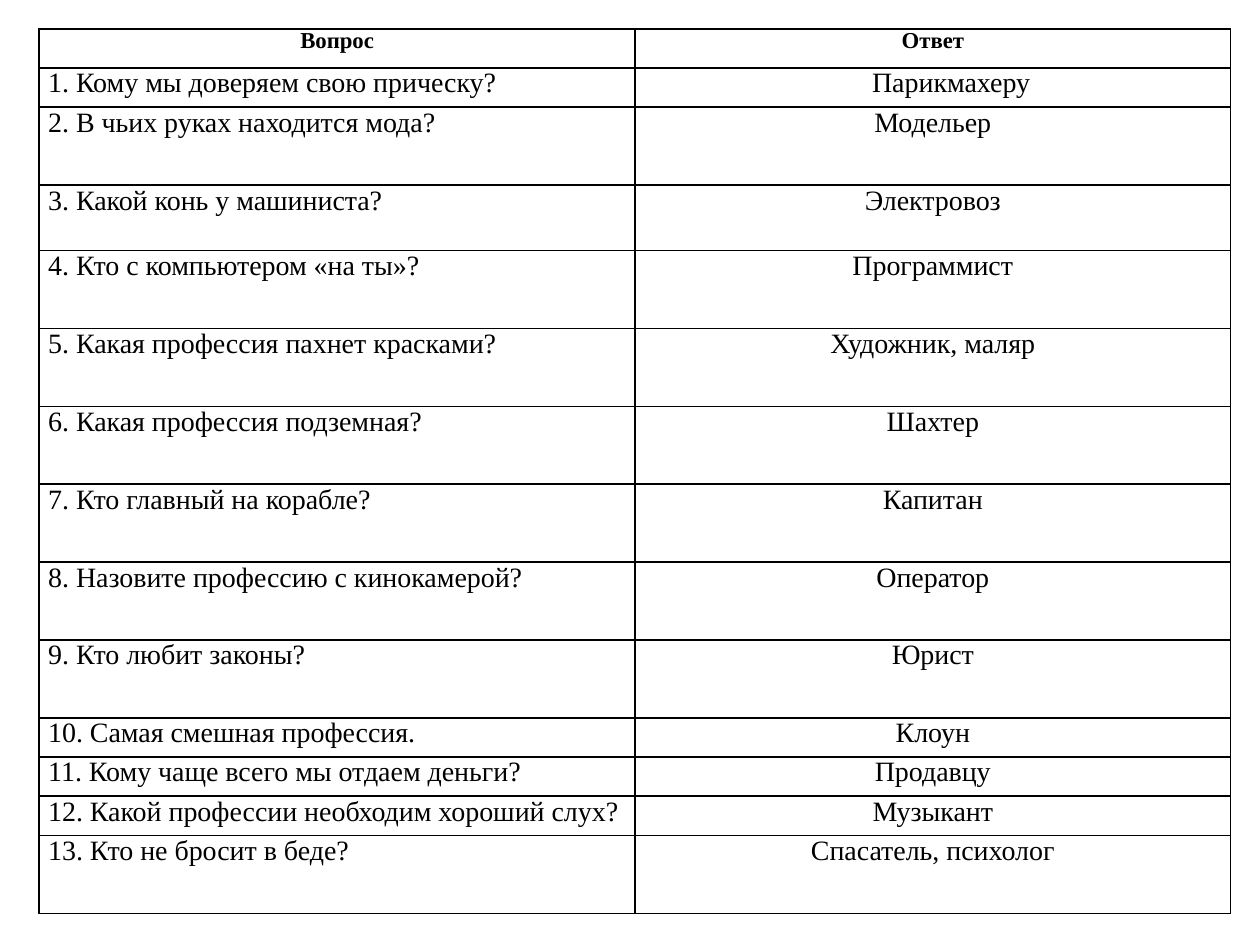
from typing import NamedTuple

from lxml.etree import SubElement
from pptx import Presentation
from pptx.dml.color import RGBColor
from pptx.enum.text import PP_ALIGN
from pptx.oxml.ns import qn
from pptx.util import Cm, Pt

FONT = "Times New Roman"
BLACK = "000000"
SHORT, MEDIUM, TALL = Cm(0.79), Cm(1.32), Cm(1.57)
COLUMN_WIDTH = Cm(12.01)
HANGING = Cm(0.97)


class Riddle(NamedTuple):
    question: str
    answer: str
    height: int = TALL
    answer_indent: int = 0


RIDDLES = [
    Riddle("Кому мы доверяем свою прическу?", "Парикмахеру", SHORT, Cm(0.74)),
    Riddle("В чьих руках находится мода?", "Модельер"),
    Riddle("Какой конь у машиниста?", "Электровоз", MEDIUM),
    Riddle("Кто с компьютером «на ты»?", "Программист"),
    Riddle("Какая профессия пахнет красками?", "Художник, маляр"),
    Riddle("Какая профессия подземная?", "Шахтер"),
    Riddle("Кто главный на корабле?", "Капитан"),
    Riddle("Назовите профессию с кинокамерой?", "Оператор"),
    Riddle("Кто любит законы?", "Юрист"),
    Riddle("Самая смешная профессия.", "Клоун", SHORT),
    Riddle("Кому чаще всего мы отдаем деньги?", "Продавцу", SHORT),
    Riddle("Какой профессии необходим хороший слух?", "Музыкант", SHORT),
    Riddle("Кто не бросит в беде?", "Спасатель, психолог"),
]


def color(hex_value: str) -> RGBColor:
    return RGBColor.from_string(hex_value)


def add_borders(cell, hex_value: str = BLACK, width: int = Pt(1)) -> None:
    """Outline a cell; call before filling, since borders precede the fill."""
    properties = cell._tc.get_or_add_tcPr()
    for side in ("a:lnL", "a:lnR", "a:lnT", "a:lnB"):
        line = SubElement(properties, qn(side), w=str(width))
        fill = SubElement(line, qn("a:solidFill"))
        SubElement(fill, qn("a:srgbClr"), val=hex_value)


def write_cell(cell, text: str, *, size: float = 16, bold: bool = False,
               align: PP_ALIGN = PP_ALIGN.CENTER, margin: int = Cm(0.18),
               left: int = 0, first_line: int = 0) -> None:
    add_borders(cell)
    cell.fill.background()
    cell.margin_left = cell.margin_right = margin
    cell.margin_top = cell.margin_bottom = 0
    paragraph = cell.text_frame.paragraphs[0]
    paragraph.alignment = align
    properties = paragraph._p.get_or_add_pPr()
    properties.set("marL", str(left))
    properties.set("indent", str(first_line))
    run = paragraph.add_run()
    run.text = text
    run.font.name = FONT
    run.font.size = Pt(size)
    run.font.bold = bold
    run.font.color.rgb = color(BLACK)


def add_riddle_table(slide, riddles: list[Riddle]) -> None:
    heights = [SHORT, *(riddle.height for riddle in riddles)]
    table = slide.shapes.add_table(
        len(heights), 2, Cm(0.79), Cm(0.58), 2 * COLUMN_WIDTH, sum(heights)
    ).table
    table.first_row = table.horz_banding = False
    for column in table.columns:
        column.width = COLUMN_WIDTH
    for row, height in zip(table.rows, heights):
        row.height = height

    for index, heading in enumerate(("Вопрос", "Ответ")):
        write_cell(table.cell(0, index), heading, size=13, bold=True,
                   margin=Cm(0.15))
    for number, riddle in enumerate(riddles, start=1):
        write_cell(table.cell(number, 0), f"{number}. {riddle.question}",
                   align=PP_ALIGN.LEFT, left=HANGING, first_line=-HANGING)
        write_cell(table.cell(number, 1), riddle.answer,
                   first_line=riddle.answer_indent)


def main() -> None:
    presentation = Presentation()
    presentation.slide_width, presentation.slide_height = Cm(25.4), Cm(19.05)
    slide = presentation.slides.add_slide(presentation.slide_layouts[6])
    add_riddle_table(slide, RIDDLES)
    presentation.save("out.pptx")


if __name__ == "__main__":
    main()
